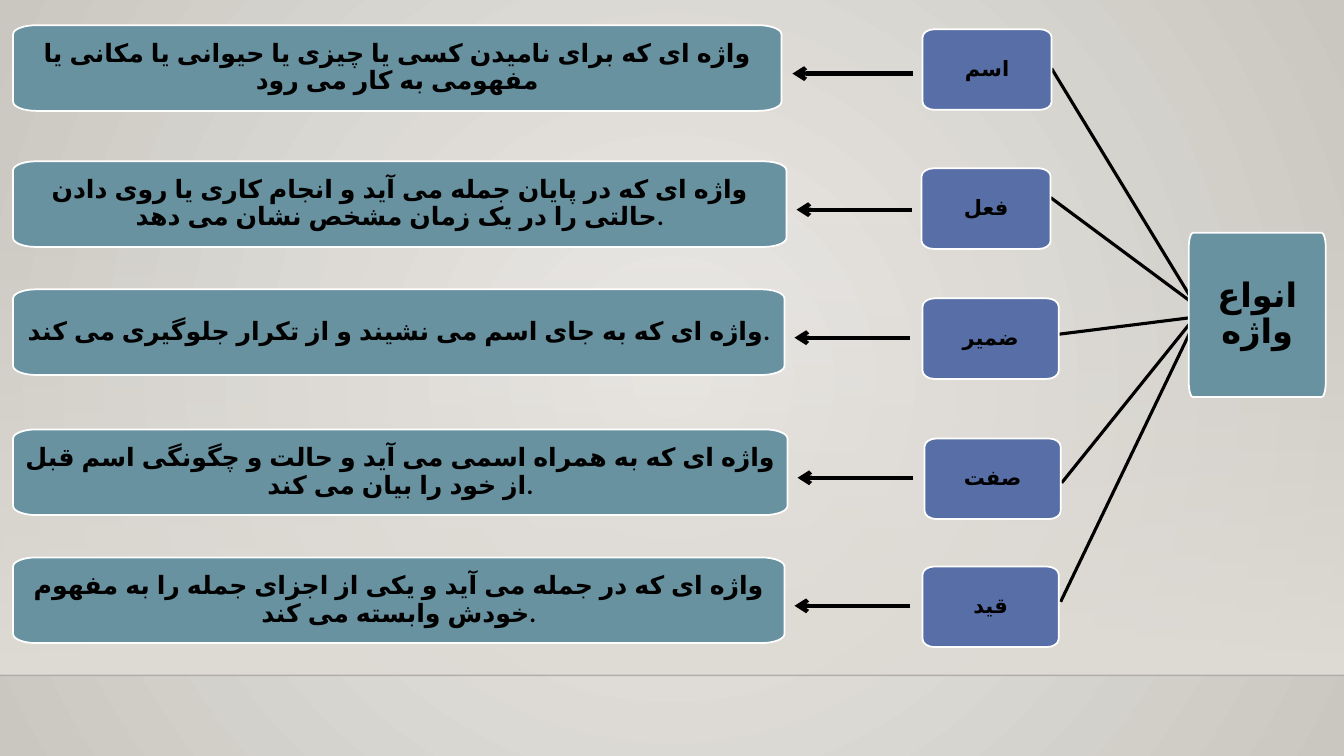
from lxml.etree import SubElement
from pptx import Presentation
from pptx.dml.color import RGBColor
from pptx.enum.lang import MSO_LANGUAGE_ID as Language
from pptx.enum.shapes import MSO_CONNECTOR as Connector, MSO_SHAPE as Preset
from pptx.enum.text import MSO_ANCHOR as Anchor, PP_ALIGN as Align
from pptx.oxml.ns import qn
from pptx.util import Inches, Pt

BLACK = RGBColor(0x00, 0x00, 0x00)
WHITE = RGBColor(0xFF, 0xFF, 0xFF)
TEAL = RGBColor(0x68, 0x92, 0xA0)
BLUE = RGBColor(0x58, 0x6E, 0xA6)
GLOW = RGBColor(0xEC, 0xEA, 0xE7)
EDGE = RGBColor(0xCA, 0xC7, 0xC1)
FLOOR = RGBColor(0xDF, 0xDB, 0xD5)

FONT = "Calibri"
SLIDE_WIDTH, SLIDE_HEIGHT = 13.33, 7.5
FLOOR_TOP, FLOOR_BOTTOM = 2.21, 6.7
CURVE = 0.55  # how far a corner's control points reach towards the corner

ROOT_BOX = (11.79, 2.31, 1.36, 1.63)
WORD_HEIGHT = 0.8
DEFINITION_LEFT, DEFINITION_HEIGHT = 0.13, 0.85
ARROW_DROP = 0.48  # from the top of a definition to its arrow

# word, (left, top, width), branch start, branch end
WORDS = [
    ("قید", (9.15, 5.62, 1.35), (11.96, 2.97), (10.52, 5.97)),
    ("صفت", (9.17, 4.35, 1.35), (11.93, 3.05), (10.53, 4.79)),
    ("اسم", (9.15, 0.29, 1.28), (11.95, 3.18), (10.43, 0.68)),
    ("فعل", (9.14, 1.67, 1.28), (12.01, 3.14), (10.42, 1.96)),
    ("ضمیر", (9.15, 2.96, 1.35), (12.14, 3.11), (10.47, 3.32)),
]

# definition, top, width, arrow start, arrow end
DEFINITIONS = [
    ("واژه ای که برای نامیدن کسی یا چیزی یا حیوانی یا مکانی یا مفهومی به کار می رود",
     0.25, 7.62, 9.06, 7.86),
    ("واژه ای که در پایان جمله می آید و انجام کاری یا روی دادن حالتی را در یک زمان مشخص نشان می دهد.",
     1.6, 7.67, 9.05, 7.9),
    ("واژه ای که به جای اسم می نشیند و از تکرار جلوگیری می کند.",
     2.87, 7.65, 9.03, 7.88),
    ("واژه ای که به همراه اسمی می آید و حالت و چگونگی اسم قبل از خود را بیان می کند.",
     4.26, 7.68, 9.06, 7.91),
    ("واژه ای که در جمله می آید و یکی از اجزای جمله را به مفهوم خودش وابسته می کند.",
     5.53, 7.65, 9.03, 7.88),
]


def set_gradient(fill, first, last):
    fill.gradient()
    for stop, color in zip(fill.gradient_stops, (first, last)):
        stop.color.rgb = color


def set_alpha(element, percent):
    """Make the first colour inside the element partly transparent."""
    color = next(element.iter(qn("a:srgbClr")))
    SubElement(color, qn("a:alpha"), val=str(percent * 1000))


def paint_background(slide):
    """Fill the slide with a gradient that spreads from the centre."""
    fill = slide.background.fill
    set_gradient(fill, GLOW, EDGE)
    gradient = next(slide.element.iter(qn("a:gradFill")))
    gradient.remove(gradient.find(qn("a:lin")))
    spread = SubElement(gradient, qn("a:path"), path="circle")
    SubElement(spread, qn("a:fillToRect"), l="50000", t="50000", r="50000", b="50000")


def add_line(slide, start, end, width, color=BLACK):
    points = [Inches(value) for value in (*start, *end)]
    line = slide.shapes.add_connector(Connector.STRAIGHT, *points)
    line.line.color.rgb = color
    line.line.width = Pt(width)
    SubElement(line.element.spPr, qn("a:effectLst"))
    return line


def add_arrow(slide, start, end):
    arrow = add_line(slide, start, end, 3)
    SubElement(arrow.line._get_or_add_ln(), qn("a:tailEnd"), type="arrow")


def add_floor(slide):
    floor = slide.shapes.add_shape(
        Preset.RECTANGLE, 0, Inches(FLOOR_TOP),
        Inches(SLIDE_WIDTH), Inches(FLOOR_BOTTOM - FLOOR_TOP))
    floor.shadow.inherit = False
    floor.line.fill.background()
    set_gradient(floor.fill, FLOOR, FLOOR)
    floor.fill.gradient_angle = 270
    set_alpha(floor.element.spPr, 0)
    edge = add_line(slide, (0, FLOOR_BOTTOM), (SLIDE_WIDTH, FLOOR_BOTTOM), 1)
    set_alpha(edge.element.spPr, 20)


def round_corners(shape):
    """Turn every second side of an eight-sided freeform into a curve."""
    points = list(shape.element.spPr.iter(qn("a:pt")))
    places = [(int(point.get("x")), int(point.get("y"))) for point in points]
    for index in range(0, 8, 2):
        start, end = places[index], places[index + 1]
        upright = index % 4 == 0
        corner = (start[0], end[1]) if upright else (end[0], start[1])
        side = points[index + 1].getparent()
        curve = SubElement(side.getparent(), qn("a:cubicBezTo"))
        for place in (start, end):
            x, y = (round(p + CURVE * (c - p)) for p, c in zip(place, corner))
            SubElement(curve, qn("a:pt"), x=str(x), y=str(y))
        curve.append(points[index + 1])
        side.getparent().replace(side, curve)


def add_rounded_box(slide, left, top, width, height, radius_x, radius_y):
    """Add a rectangle whose corners are quarters of an ellipse."""
    right, bottom = left + width, top + height
    outline = [
        (left, top + radius_y), (left + radius_x, top),
        (right - radius_x, top), (right, top + radius_y),
        (right, bottom - radius_y), (right - radius_x, bottom),
        (left + radius_x, bottom), (left, bottom - radius_y),
    ]
    points = [(Inches(x), Inches(y)) for x, y in outline]
    builder = slide.shapes.build_freeform(*points[0])
    builder.add_line_segments(points[1:], close=True)
    shape = builder.convert_to_shape()
    round_corners(shape)
    return shape


def add_box(slide, text, box, radii, color, size, inset):
    shape = add_rounded_box(slide, *box, *radii)
    shape.shadow.inherit = False
    shape.fill.solid()
    shape.fill.fore_color.rgb = color
    shape.line.color.rgb = WHITE
    shape.line.width = Pt(1.25)

    frame = shape.text_frame
    frame.word_wrap = True
    frame.vertical_anchor = Anchor.MIDDLE
    frame.margin_left = frame.margin_right = Inches(inset)
    frame.margin_top = frame.margin_bottom = Inches(inset)
    paragraph = frame.paragraphs[0]
    paragraph.alignment = Align.CENTER
    paragraph.line_spacing = 0.9
    run = paragraph.add_run()
    run.text = text
    run.font.name = FONT
    run.font.size = Pt(size)
    run.font.bold = True
    run.font.color.rgb = BLACK
    run.font.language_id = Language.FARSI


def main():
    presentation = Presentation()
    presentation.slide_width = Inches(SLIDE_WIDTH)
    presentation.slide_height = Inches(SLIDE_HEIGHT)
    slide = presentation.slides.add_slide(presentation.slide_layouts[6])

    paint_background(slide)
    add_floor(slide)
    for word, place, start, end in WORDS:
        add_line(slide, start, end, 2.25)
        add_box(slide, word, (*place, WORD_HEIGHT), (0.12, 0.08), BLUE, 15, 0.04)
    add_box(slide, "انواع واژه", ROOT_BOX, (0.04, 0.16), TEAL, 24, 0.06)
    for definition, top, width, start, end in DEFINITIONS:
        arrow_y = top + ARROW_DROP
        add_arrow(slide, (start, arrow_y), (end, arrow_y))
        box = (DEFINITION_LEFT, top, width, DEFINITION_HEIGHT)
        add_box(slide, definition, box, (0.23, 0.09), TEAL, 18, 0.06)

    presentation.save("out.pptx")


if __name__ == "__main__":
    main()
